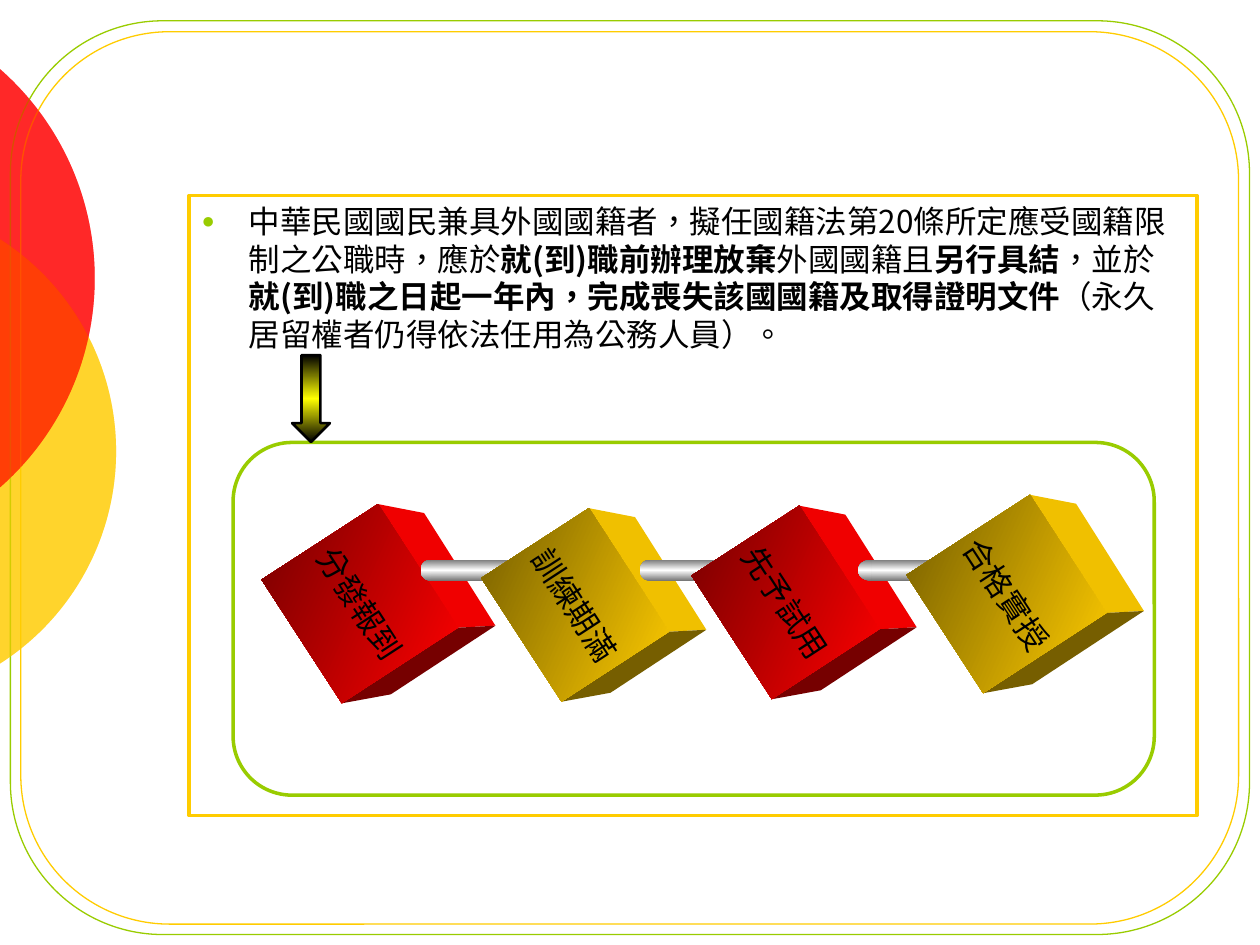
import math

from lxml import etree
from pptx import Presentation
from pptx import util as u
from pptx.dml.color import RGBColor
from pptx.enum import shapes, text
from pptx.oxml import parse_xml
from pptx.oxml.ns import nsdecls, qn

COLORS = {
    "white": "FFFFFF", "black": "000000", "green": "99CC00", "gold": "FFCC00",
    "red": "FF0000", "red_side": "F00000", "red_dark": "760000",
    "gold_side": "F0C000", "gold_dark": "765E00",
    "grey": "767676", "yellow": "FFFF00",
}
FONT, CJK_FONT = "Arial", "Noto Sans CJK SC"
TILT = 57  # degrees the cubes are turned
STEEL = ["grey", "white", "grey"]


class SlideBuilder:
    def __init__(self, slide):
        self.slide = slide

    def rgb(self, name):
        return RGBColor.from_string(COLORS[name])

    def style(self, shape, fill=None, line=None, width=1):
        """Plain fill for a colour name, gradient fill for (names, angle)."""
        shape.shadow.inherit = False
        if fill is None:
            shape.fill.background()
        elif isinstance(fill, tuple):
            self.gradient(shape, *fill)
        else:
            shape.fill.solid()
            shape.fill.fore_color.rgb = self.rgb(fill)
        if line:
            shape.line.color.rgb = self.rgb(line)
            shape.line.width = u.Pt(width)
        else:
            shape.line.fill.background()

    def gradient(self, shape, names, angle):
        last = len(names) - 1
        stops = "".join(
            f'<a:gs pos="{100000 * i // last}"><a:srgbClr val="{COLORS[name]}"/></a:gs>'
            for i, name in enumerate(names))
        shape._element.spPr.find(qn("a:prstGeom")).addnext(parse_xml(
            f'<a:gradFill {nsdecls("a")} rotWithShape="1"><a:gsLst>{stops}</a:gsLst>'
            f'<a:lin ang="{angle * 60000}" scaled="0"/></a:gradFill>'))

    def shape(self, kind, left, top, width, height, fill=None, line=None, weight=1):
        shape = self.slide.shapes.add_shape(
            kind, u.Cm(left), u.Cm(top), u.Cm(width), u.Cm(height))
        self.style(shape, fill, line, weight)
        return shape

    def polygon(self, points, fill):
        points = [(u.Cm(x), u.Cm(y)) for x, y in points]
        builder = self.slide.shapes.build_freeform(*points[0])
        builder.add_line_segments(points[1:], close=True)
        self.style(builder.convert_to_shape(), fill)

    def disc(self, left, top, diameter, fill, opacity):
        disc = self.shape(shapes.MSO_SHAPE.OVAL, left, top, diameter, diameter, fill)
        color = disc._element.spPr.find(qn("a:solidFill"))[0]
        etree.SubElement(color, qn("a:alpha"), val=str(opacity * 1000))

    def run(self, paragraph, words, font, bold=False):
        run = paragraph.add_run()
        run.text = words
        run.font.size = u.Pt(18)
        run.font.name = font
        run.font.bold = bold
        run.font.color.rgb = self.rgb("black")
        props = run._r.get_or_add_rPr()
        props.set("lang", "zh-TW")
        etree.SubElement(props, qn("a:ea"), typeface=CJK_FONT)

    def body(self, left, top, width, height, runs):
        box = self.slide.placeholders[1]
        box.left, box.top, box.width, box.height = map(
            u.Cm, (left, top, width, height))
        box.fill.solid()
        box.fill.fore_color.rgb = self.rgb("white")
        box.line.color.rgb = self.rgb("gold")
        box.line.width = u.Pt(2)
        frame = box.text_frame
        frame.auto_size = text.MSO_AUTO_SIZE.NONE
        frame.vertical_anchor = text.MSO_ANCHOR.TOP
        paragraph = frame.paragraphs[0]
        paragraph.space_before = u.Pt(3.6)
        paragraph.line_spacing = 1.0
        props = paragraph._p.get_or_add_pPr()
        props.set("marL", str(u.Cm(0.95)))
        props.set("indent", str(u.Cm(-0.95)))
        for bullet in (f'<a:buClr {nsdecls("a")}><a:srgbClr val="{COLORS["green"]}"/></a:buClr>',
                       f'<a:buSzPct {nsdecls("a")} val="70000"/>',
                       f'<a:buChar {nsdecls("a")} char="●"/>'):
            props.append(parse_xml(bullet))
        for words, bold in runs:
            self.run(paragraph, words, CJK_FONT, bold)

    def cube(self, label, left, top, width, height, color):
        cos, sin = math.cos(math.radians(TILT)), math.sin(math.radians(TILT))

        def corner(x, y):
            return (left + width / 2 + (x * width * cos - y * height * sin) / 2,
                    top + height / 2 + (x * width * sin + y * height * cos) / 2)

        # Front corners and the matching corners at the back
        front = [corner(-1, -1), corner(1, -1), corner(1, 1)]
        depth = [(0.93, 0.18), (0.75, -0.04), (0.99, -0.18)]
        back = [(x + dx, y + dy) for (x, y), (dx, dy) in zip(front, depth)]
        for i, tone in enumerate(("side", "dark")):
            self.polygon([front[i], front[i + 1], back[i + 1], back[i]],
                         f"{color}_{tone}")

        face = self.shape(shapes.MSO_SHAPE.RECTANGLE, left, top, width, height,
                          ([color, f"{color}_dark"], 147))
        face.rotation = TILT
        frame = face.text_frame
        frame.word_wrap = False
        frame.vertical_anchor = text.MSO_ANCHOR.MIDDLE
        frame.paragraphs[0].alignment = text.PP_ALIGN.CENTER
        self.run(frame.paragraphs[0], label, FONT)

    def rod(self, left, length, cap):
        top, thickness = 11.28, 0.43
        self.shape(shapes.MSO_SHAPE.OVAL, left, top, cap, thickness, (STEEL, 90))
        self.shape(shapes.MSO_SHAPE.RECTANGLE, left + cap / 2, top, length,
                   thickness, (STEEL, 90))


def main():
    deck = Presentation()
    deck.slide_width, deck.slide_height = u.Cm(25.4), u.Cm(19.05)
    slide = deck.slides.add_slide(deck.slide_layouts[1])
    title = slide.shapes.title._element
    title.getparent().remove(title)
    page = SlideBuilder(slide)
    rounded = shapes.MSO_SHAPE.ROUNDED_RECTANGLE

    # Discs below and above the double frame
    def discs():
        page.disc(-7.82, 4.02, 10.16, "gold", 58)
        page.disc(-9.31, 0, 11.22, "red", 60)

    discs()
    page.shape(rounded, 0.21, 0.42, 24.98, 18.42, line="green", weight=0.75)
    page.shape(rounded, 0.42, 0.64, 24.55, 17.99, line="gold", weight=0.75)
    discs()

    # Statement on nationality, in the framed body
    page.body(3.81, 3.94, 20.32, 12.5, [
        ("中華民國國民兼具外國國籍者，擬任國籍法第20條所定應受國籍限制之公職時，應於", False),
        ("就(到)職前辦理放棄", True),
        ("外國國籍且", False),
        ("另行具結", True),
        ("，並於", False),
        ("就(到)職之日起一年內，完成喪失該國國籍及取得證明文件", True),
        ("（永久居留權者仍得依法任用為公務人員）。", False),
    ])

    # Panel with the chain of stages
    page.shape(rounded, 4.7, 8.92, 18.57, 7.11, "white", "green", 2)
    page.cube("分發報到", 5.77, 10.77, 2.97, 2.8, "red")
    page.rod(8.48, 1.98, 0.41)
    page.cube("訓練期滿", 10.11, 10.9, 2.97, 2.59, "gold")
    page.rod(12.9, 1.98, 0.41)
    page.cube("先予試用", 14.35, 10.85, 2.97, 2.59, "red")
    page.rod(17.3, 2.59, 0.53)
    page.cube("合格實授", 18.87, 10.49, 2.84, 2.97, "gold")

    # Arrow from the statement to the panel
    page.shape(shapes.MSO_SHAPE.DOWN_ARROW, 5.89, 7.16, 0.76, 1.75,
               (["black", "yellow", "black"], 90), "black", 1.5)

    deck.save("out.pptx")


if __name__ == "__main__":
    main()
